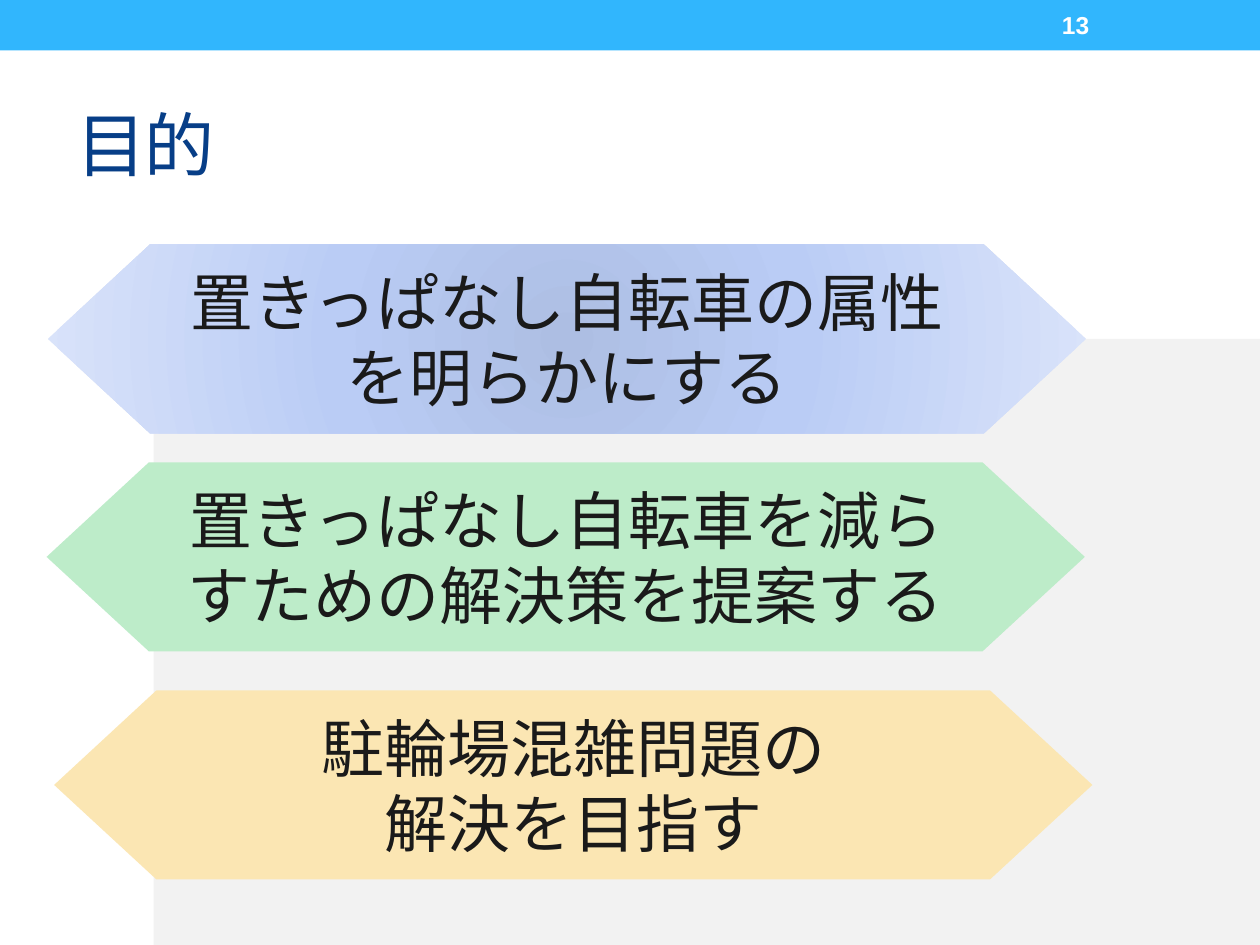
from pptx import Presentation
from pptx.dml.color import RGBColor
from pptx.enum.shapes import MSO_SHAPE
from pptx.enum.text import MSO_ANCHOR, PP_ALIGN
from pptx.oxml import parse_xml
from pptx.oxml.ns import nsdecls
from pptx.util import Inches, Pt

RECTANGLE, HEXAGON = MSO_SHAPE.RECTANGLE, MSO_SHAPE.HEXAGON
MIDDLE = MSO_ANCHOR.MIDDLE
LEFT, CENTER = PP_ALIGN.LEFT, PP_ALIGN.CENTER

COLORS = {
    "bar": "31B6FD",
    "panel": "F2F2F2",
    "title": "073E87",
    "number": "FFFFFF",
    "text": "1A1A1A",
    "green": "BDECC9",
    "yellow": "FBE6B3",
}
BLUE_STOPS = [(0, "ADBEE3"), (45, "BACCF5"), (100, "D9E3FA")]

GOALS = [
    (0.38, 1.94, BLUE_STOPS, ["置きっぱなし自転車の属性を明らかにする"]),
    (0.37, 3.67, COLORS["green"], ["置きっぱなし自転車を減らすための解決策を提案する"]),
    (0.43, 5.48, COLORS["yellow"], ["駐輪場混雑問題の", "解決を目指す"]),
]


def write_text(shape, lines, size, color, bold=False, align=LEFT, spacing=0):
    """Fill the shape with one paragraph a line; spacing is in points."""
    frame = shape.text_frame
    frame.word_wrap = True
    frame.vertical_anchor = MIDDLE
    for index, line in enumerate(lines):
        paragraph = frame.add_paragraph() if index else frame.paragraphs[0]
        paragraph.alignment = align
        run = paragraph.add_run()
        run.text = line
        run.font.name = "Arial"
        run.font.size = Pt(size)
        run.font.bold = bold
        run.font.color.rgb = RGBColor.from_string(color)
        if spacing:
            run.font._element.set("spc", str(spacing * 100))


def fill_radial(shape, stops):
    """Fill from the centre outwards with (percent, colour) stops."""
    stop_xml = "".join(
        f'<a:gs pos="{percent * 1000}"><a:srgbClr val="{color}"/></a:gs>'
        for percent, color in stops
    )
    gradient = parse_xml(
        f'<a:gradFill {nsdecls("a")} rotWithShape="1"><a:gsLst>{stop_xml}</a:gsLst>'
        '<a:path path="circle">'
        '<a:fillToRect l="100000" t="100000" r="100000" b="100000"/>'
        "</a:path></a:gradFill>"
    )
    shape.fill.background()
    properties = shape._element.spPr
    properties.replace(properties.find("{*}noFill"), gradient)


class SlideBuilder:
    def __init__(self, slide):
        self.slide = slide

    def add_block(self, kind, left, top, width, height, fill):
        """Add a borderless shape; fill is a colour or a list of stops."""
        shape = self.slide.shapes.add_shape(
            kind, Inches(left), Inches(top), Inches(width), Inches(height)
        )
        shape.shadow.inherit = False
        shape.line.fill.background()
        if isinstance(fill, str):
            shape.fill.solid()
            shape.fill.fore_color.rgb = RGBColor.from_string(fill)
        else:
            fill_radial(shape, fill)
        return shape

    def add_label(self, left, top, width, height, text, **text_format):
        box = self.slide.shapes.add_textbox(
            Inches(left), Inches(top), Inches(width), Inches(height)
        )
        write_text(box, [text], **text_format)

    def add_goal(self, left, top, fill, lines):
        hexagon = self.add_block(HEXAGON, left, top, 8.24, 1.5, fill)
        hexagon.adjustments[0] = 0.541
        write_text(hexagon, lines, size=36, color=COLORS["text"], align=CENTER)


def main():
    presentation = Presentation()
    presentation.slide_width = Inches(10)
    presentation.slide_height = Inches(7.5)
    slide = presentation.slides.add_slide(presentation.slide_layouts[6])
    builder = SlideBuilder(slide)

    builder.add_block(RECTANGLE, 0, 0, 10, 0.4, COLORS["bar"])
    builder.add_block(RECTANGLE, 1.22, 2.69, 8.78, 4.81, COLORS["panel"])
    builder.add_label(0.51, 0.6, 9, 1.08, "目的",
                      size=40, color=COLORS["title"], spacing=-1)
    builder.add_label(8.33, 0.02, 1.17, 0.36, "13",
                      size=14, color=COLORS["number"], bold=True)
    for goal in GOALS:
        builder.add_goal(*goal)

    presentation.save("out.pptx")


if __name__ == "__main__":
    main()
